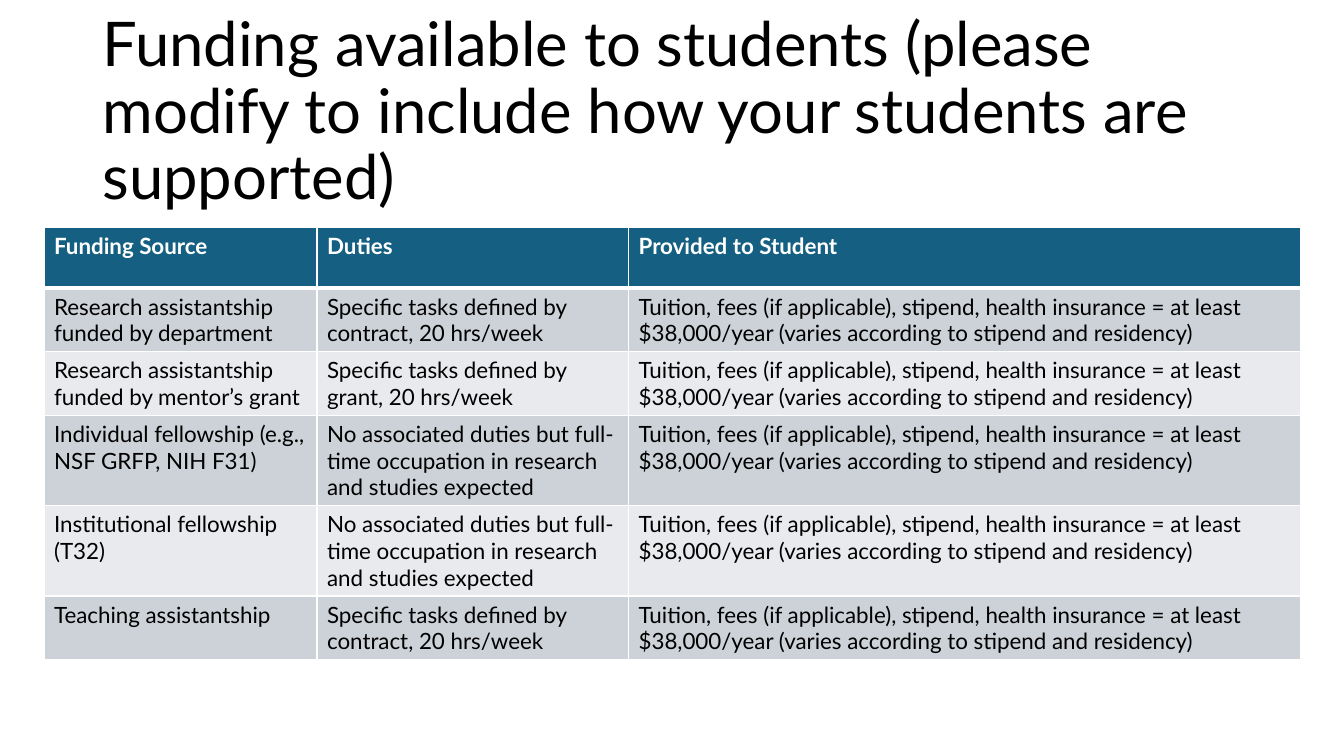
import dataclasses

import pptx
import pptx.dml.color
import pptx.enum.text
import pptx.oxml
import pptx.oxml.ns
import pptx.presentation
import pptx.slide
import pptx.table
import pptx.text.text
import pptx.util

Cm = pptx.util.Cm


@dataclasses.dataclass(frozen=True)
class Theme:
    font: str = "Lato"
    ink: str = "000000"
    paper: str = "FFFFFF"
    header: str = "156082"
    bands: tuple[str, str] = ("CCD2D8", "E8EAED")
    title_size: int = 44
    table_size: int = 16
    rule: int = 1
    header_rule: int = 3


@dataclasses.dataclass(frozen=True)
class Funding:
    source: str
    duties: str
    provided: str = (
        "Tuition, fees (if applicable), stipend, health insurance = at least "
        "$38,000/year (varies according to stipend and residency)"
    )


THEME = Theme()
TITLE = (
    "Funding available to students "
    "(please modify to include how your students are supported)"
)
HEADINGS = Funding("Funding Source", "Duties", "Provided to Student")
CONTRACT_DUTIES = "Specific tasks defined by contract, 20 hrs/week"
FELLOWSHIP_DUTIES = (
    "No associated duties but full-time occupation in research and studies expected"
)
FUNDINGS = [
    Funding("Research assistantship funded by department", CONTRACT_DUTIES),
    Funding(
        "Research assistantship funded by mentor’s grant",
        "Specific tasks defined by grant, 20 hrs/week",
    ),
    Funding("Individual fellowship (e.g., NSF GRFP, NIH F31)", FELLOWSHIP_DUTIES),
    Funding("Institutional fellowship (T32)", FELLOWSHIP_DUTIES),
    Funding("Teaching assistantship", CONTRACT_DUTIES),
]
COLUMN_WIDTHS = (6.88, 7.85, 16.94)
HEADER_HEIGHT = 1.52
FUNDING_HEIGHT = 1.04
TABLE_HEIGHT = 10.92


def apply_format(target: object, values: dict[str, object]) -> None:
    for name, value in values.items():
        setattr(target, name, value)


def write(
    paragraph: pptx.text.text._Paragraph, text: str, size: int, color: str, bold: bool
) -> None:
    run = paragraph.add_run()
    run.text = text
    apply_format(
        run.font, {"name": THEME.font, "size": pptx.util.Pt(size), "bold": bold}
    )
    run.font.color.rgb = pptx.dml.color.RGBColor.from_string(color)


def add_borders(cell: pptx.table._Cell, bottom: int) -> None:
    properties = cell._tc.get_or_add_tcPr()
    widths = {"lnL": THEME.rule, "lnR": THEME.rule, "lnT": THEME.rule, "lnB": bottom}
    for side, width in widths.items():
        properties.append(
            pptx.oxml.parse_xml(
                f'<a:{side} {pptx.oxml.ns.nsdecls("a")} w="{pptx.util.Pt(width)}">'
                f'<a:solidFill><a:srgbClr val="{THEME.paper}"/></a:solidFill>'
                f"</a:{side}>"
            )
        )


def add_title(slide: pptx.slide.Slide) -> None:
    title = slide.shapes.title
    apply_format(
        title,
        {"left": Cm(2.33), "top": Cm(1.02), "width": Cm(29.21), "height": Cm(3.68)},
    )
    apply_format(
        title.text_frame,
        {
            "word_wrap": True,
            "auto_size": pptx.enum.text.MSO_AUTO_SIZE.NONE,
            "vertical_anchor": pptx.enum.text.MSO_ANCHOR.MIDDLE,
        },
    )
    paragraph = title.text_frame.paragraphs[0]
    apply_format(
        paragraph,
        {
            "alignment": pptx.enum.text.PP_ALIGN.LEFT,
            "line_spacing": 0.9,
            "space_before": pptx.util.Pt(0),
        },
    )
    write(paragraph, TITLE, THEME.title_size, THEME.ink, False)


def fill_row(
    table: pptx.table.Table, index: int, funding: Funding, is_header: bool
) -> None:
    fill = THEME.header if is_header else THEME.bands[(index - 1) % 2]
    ink = THEME.paper if is_header else THEME.ink
    after_header = THEME.header_rule if is_header else THEME.rule
    table.rows[index].height = Cm(HEADER_HEIGHT if is_header else FUNDING_HEIGHT)
    for column, text in enumerate(dataclasses.astuple(funding)):
        cell = table.cell(index, column)
        add_borders(cell, after_header)
        cell.fill.solid()
        cell.fill.fore_color.rgb = pptx.dml.color.RGBColor.from_string(fill)
        write(cell.text_frame.paragraphs[0], text, THEME.table_size, ink, is_header)


def add_funding_table(slide: pptx.slide.Slide) -> None:
    frame = slide.shapes.add_table(
        len(FUNDINGS) + 1,
        len(COLUMN_WIDTHS),
        Cm(1.11),
        Cm(5.74),
        Cm(sum(COLUMN_WIDTHS)),
        Cm(TABLE_HEIGHT),
    )
    for column, width in zip(frame.table.columns, COLUMN_WIDTHS):
        column.width = Cm(width)
    for index, funding in enumerate([HEADINGS, *FUNDINGS]):
        fill_row(frame.table, index, funding, index == 0)
    frame.height = Cm(TABLE_HEIGHT)


def main() -> None:
    presentation = pptx.Presentation()
    apply_format(
        presentation, {"slide_width": Cm(33.87), "slide_height": Cm(19.05)}
    )
    slide = presentation.slides.add_slide(presentation.slide_layouts[5])
    add_title(slide)
    add_funding_table(slide)
    presentation.save("out.pptx")


if __name__ == "__main__":
    main()
